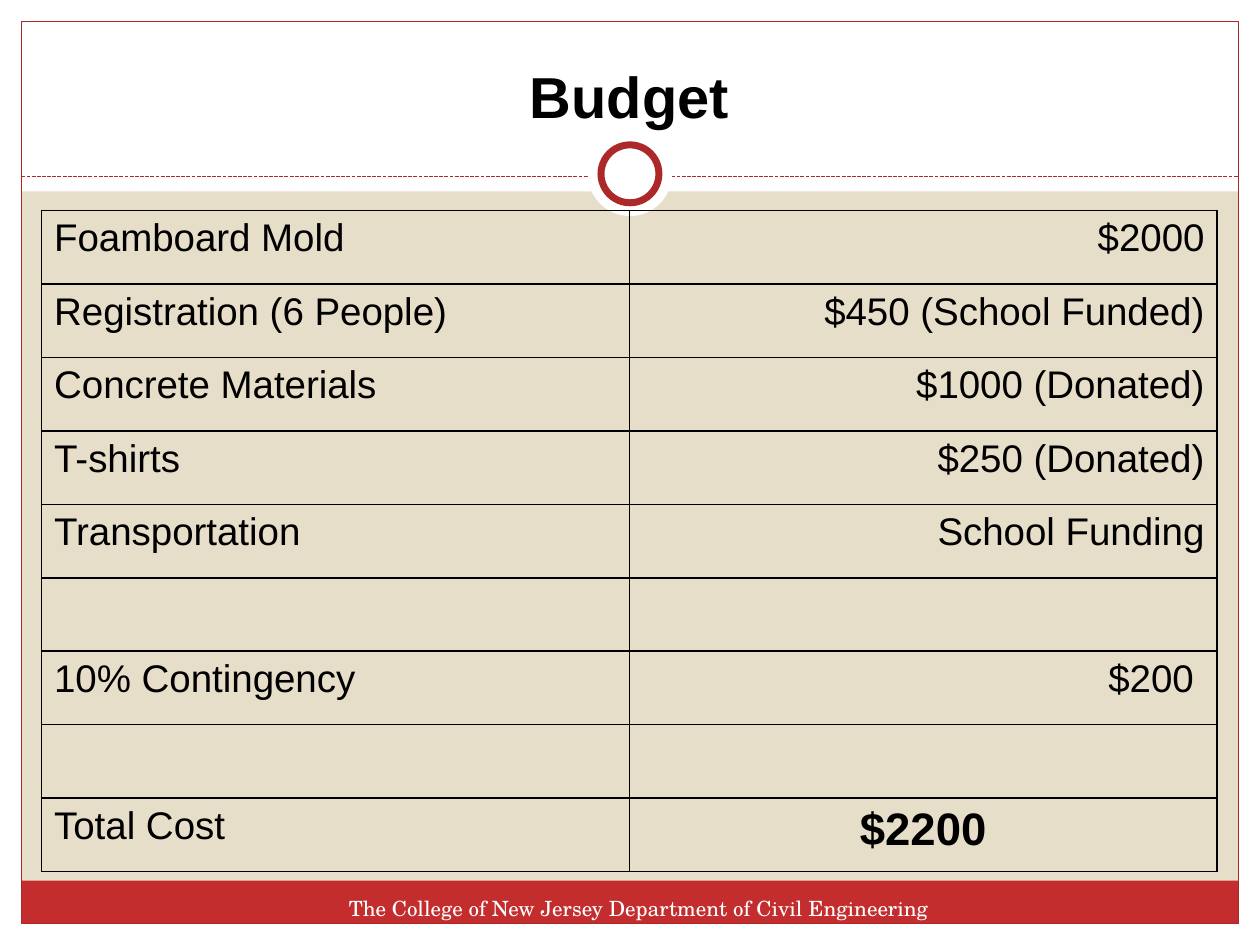
from lxml import etree
from pptx import Presentation
from pptx.dml.color import RGBColor
from pptx.enum.dml import MSO_LINE
from pptx.enum.shapes import MSO_CONNECTOR, MSO_SHAPE
from pptx.enum.text import MSO_ANCHOR, PP_ALIGN
from pptx.oxml.ns import qn
from pptx.util import Inches, Pt

WIDTH, HEIGHT = 10, 7.5
MARGIN = 0.17
WHITE, BLACK, SAND = "FFFFFF", "000000", "E7DEC9"
RED, DARK_RED = "C32D2E", "AC2829"

TITLE = "Budget"
FOOTER = "The College of New Jersey Department of Civil Engineering"
BUDGET = [
    ("Foamboard Mold", "$2000"),
    ("Registration (6 People)", "$450 (School Funded)"),
    ("Concrete Materials", "$1000 (Donated)"),
    ("T-shirts", "$250 (Donated)"),
    ("Transportation", "School Funding"),
    ("", ""),
    ("10% Contingency", "$200 "),
    ("", ""),
    ("Total Cost", "$2200"),
]
BANDS = [
    (0, HEIGHT - MARGIN, WIDTH, MARGIN, WHITE),
    (0, 0, WIDTH, 1.52, WHITE),
    (0, 0, MARGIN, HEIGHT, WHITE),
    (WIDTH - MARGIN, 0, MARGIN, HEIGHT, WHITE),
    (MARGIN, 6.99, WIDTH - 2 * MARGIN, 0.34, RED),
]
RING_CENTER = (WIDTH / 2, 1.38)
RULE_Y = 1.4
TABLE_BOX = (0.33, 1.67, 9.33, 5.25)


def color(value):
    return RGBColor.from_string(value)


def add_shape(slide, kind, box, fill=None, line=None, line_width=0.75):
    shape = slide.shapes.add_shape(kind, *map(Inches, box))
    shape.shadow.inherit = False
    if fill:
        shape.fill.solid()
        shape.fill.fore_color.rgb = color(fill)
    else:
        shape.fill.background()
    if line:
        shape.line.color.rgb = color(line)
        shape.line.width = Pt(line_width)
    else:
        shape.line.fill.background()
    return shape


def add_disc(slide, diameter, **style):
    x, y = RING_CENTER
    box = (x - diameter / 2, y - diameter / 2, diameter, diameter)
    add_shape(slide, MSO_SHAPE.OVAL, box, WHITE, **style)


def add_rule(slide):
    rule = slide.shapes.add_connector(
        MSO_CONNECTOR.STRAIGHT, Inches(MARGIN), Inches(RULE_Y),
        Inches(WIDTH - MARGIN), Inches(RULE_Y))
    rule.line.color.rgb = color(DARK_RED)
    rule.line.width = Pt(0.75)
    rule.line.dash_style = MSO_LINE.SQUARE_DOT
    etree.SubElement(rule._element.spPr, qn("a:effectLst"))


def set_text(text_frame, text, size, font="Arial", fill=BLACK,
             bold=False, align=PP_ALIGN.LEFT):
    text_frame.text = text
    paragraph = text_frame.paragraphs[0]
    paragraph.alignment = align
    for run in paragraph.runs:
        run.font.name = font
        run.font.size = Pt(size)
        run.font.bold = bold
        run.font.color.rgb = color(fill)


def add_text(slide, box, text, size, anchor=MSO_ANCHOR.TOP, **style):
    text_frame = slide.shapes.add_textbox(*map(Inches, box)).text_frame
    text_frame.word_wrap = True
    text_frame.vertical_anchor = anchor
    set_text(text_frame, text, size, **style)


def set_borders(cell):
    properties = cell._tc.get_or_add_tcPr()
    for index, side in enumerate(("a:lnL", "a:lnR", "a:lnT", "a:lnB")):
        line = etree.Element(qn(side), w=str(Pt(1)))
        fill = etree.SubElement(line, qn("a:solidFill"))
        etree.SubElement(fill, qn("a:srgbClr"), val=BLACK)
        properties.insert(index, line)


def add_budget_table(slide):
    frame = slide.shapes.add_table(len(BUDGET), 2, *map(Inches, TABLE_BOX))
    table = frame.table
    table.first_row = table.horz_banding = False
    last_row = len(BUDGET) - 1
    for row, entry in enumerate(BUDGET):
        for column, text in enumerate(entry):
            cell = table.cell(row, column)
            cell.fill.background()
            set_borders(cell)
            if column == 0:
                set_text(cell.text_frame, text, 22)
            elif row == last_row:
                set_text(cell.text_frame, text, 26, bold=True, align=PP_ALIGN.CENTER)
            else:
                set_text(cell.text_frame, text, 22, align=PP_ALIGN.RIGHT)


def main():
    presentation = Presentation()
    presentation.slide_width = Inches(WIDTH)
    presentation.slide_height = Inches(HEIGHT)
    slide = presentation.slides.add_slide(presentation.slide_layouts[6])
    slide.background.fill.solid()
    slide.background.fill.fore_color.rgb = color(SAND)

    for *box, fill in BANDS:
        add_shape(slide, MSO_SHAPE.RECTANGLE, box, fill)
    border = (MARGIN, MARGIN, WIDTH - 2 * MARGIN, HEIGHT - 2 * MARGIN)
    add_shape(slide, MSO_SHAPE.RECTANGLE, border, line=DARK_RED)
    add_rule(slide)
    add_disc(slide, 0.67)
    add_disc(slide, 0.46, line=DARK_RED, line_width=4)

    add_text(slide, (0.33, 0.25, 9.33, 0.83), TITLE, 33, MSO_ANCHOR.BOTTOM,
             bold=True, align=PP_ALIGN.CENTER)
    add_budget_table(slide)
    add_text(slide, (2.67, 7.06, 5.67, 0.4), FOOTER, 12,
             font="TeX Gyre Schola", fill=WHITE)
    presentation.save("out.pptx")


if __name__ == "__main__":
    main()
